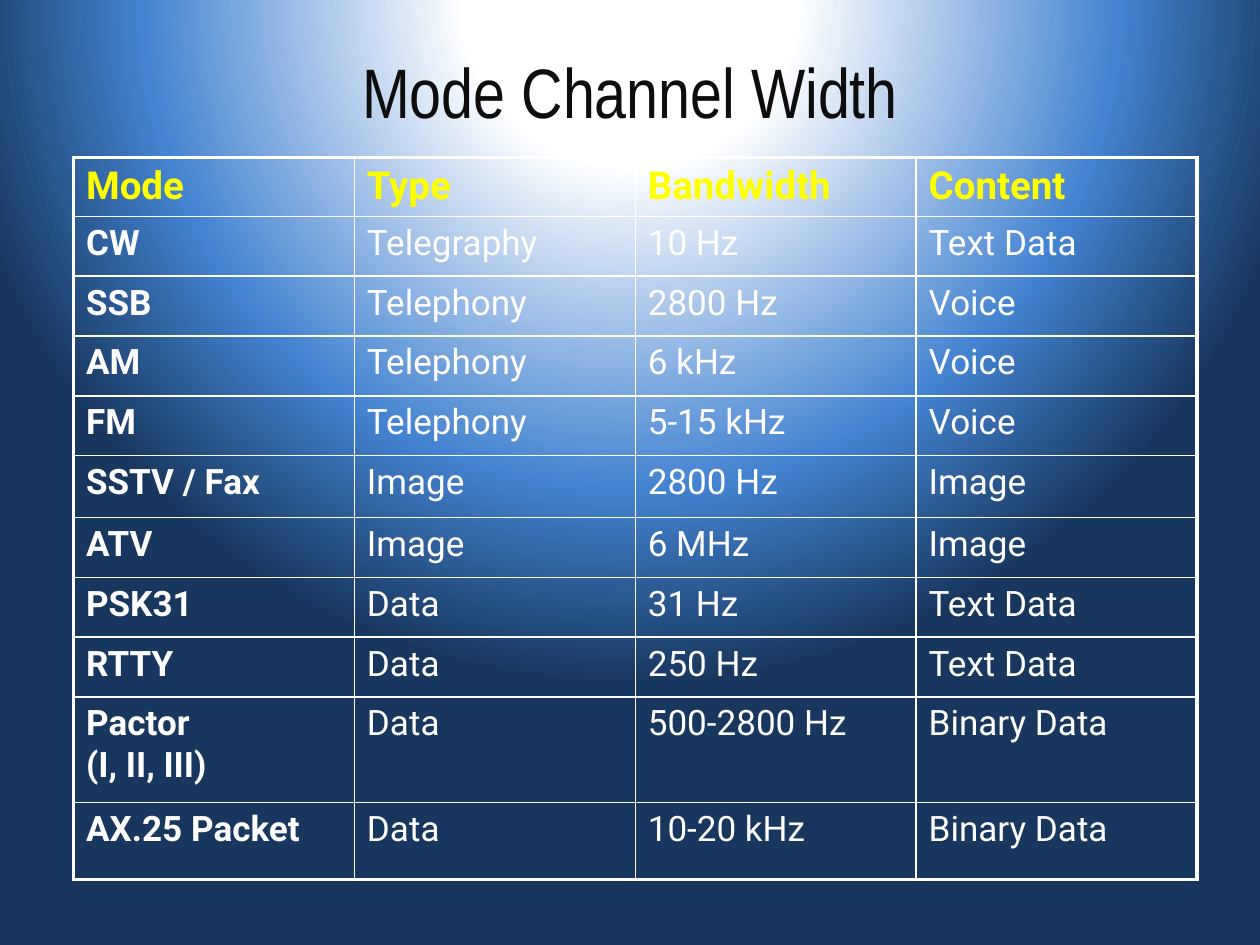
from dataclasses import dataclass

from lxml import etree
from pptx import Presentation
from pptx import util as u
from pptx.dml.color import RGBColor
from pptx.enum import text
from pptx.oxml import parse_xml
from pptx.oxml.ns import nsdecls, qn


@dataclass(frozen=True)
class Theme:
    title_font: str = "Arial Narrow"
    body_font: str = "Roboto"
    title_color: str = "0D0D0D"
    header_color: str = "FFFF00"
    body_color: str = "FFFFFF"
    border_color: str = "FFFFFF"
    glow: tuple = ((21, "FFFFFF", 100), (62, "4483D1", 100), (87, "17375E", 78))
    title_size: float = 40
    header_size: float = 22
    body_size: float = 20
    outer_border: float = 2.25
    inner_border: float = 1


class ModeSlide:
    """Builds a themed slide from a background, a title and a table."""

    def __init__(self, deck, theme):
        self.theme = theme
        self.slide = deck.slides.add_slide(deck.slide_layouts[6])

    def background(self):
        fill = self.slide.background.fill
        fill.solid()
        stops = "".join(
            f'<a:gs pos="{place * 1000}"><a:srgbClr val="{color}">'
            f'<a:alpha val="{alpha * 1000}"/></a:srgbClr></a:gs>'
            for place, color, alpha in self.theme.glow
        )
        gradient = parse_xml(
            f'<a:gradFill {nsdecls("a")} rotWithShape="1"><a:gsLst>{stops}</a:gsLst>'
            '<a:path path="circle"><a:fillToRect l="50000" t="-80000" r="50000" b="180000"/>'
            "</a:path></a:gradFill>"
        )
        solid = next(self.slide.element.iter(qn("a:solidFill")))
        solid.getparent().replace(solid, gradient)

    def format_runs(self, paragraph, font, size, color, bold=False):
        for run in paragraph.runs:
            run.font.name = font
            run.font.size = u.Pt(size)
            run.font.bold = bold
            run.font.color.rgb = RGBColor.from_string(color)

    def title(self, wording, left, top, width, height):
        box = self.slide.shapes.add_textbox(*map(u.Pt, (left, top, width, height)))
        frame = box.text_frame
        frame.word_wrap = True
        frame.vertical_anchor = text.MSO_ANCHOR.MIDDLE
        frame.text = wording
        heading = frame.paragraphs[0]
        heading.alignment = text.PP_ALIGN.CENTER
        self.format_runs(heading, self.theme.title_font, self.theme.title_size,
                         self.theme.title_color)

    def cell_borders(self, cell, outer_sides):
        properties = cell._tc.get_or_add_tcPr()
        for side in "LRTB":
            width = self.theme.outer_border if side in outer_sides else self.theme.inner_border
            properties.append(parse_xml(
                f'<a:ln{side} {nsdecls("a")} w="{u.Pt(width)}"><a:solidFill>'
                f'<a:srgbClr val="{self.theme.border_color}"/></a:solidFill></a:ln{side}>'
            ))

    def cell(self, cell, wording, is_header, is_mode):
        theme = self.theme
        cell.text_frame.text = wording
        paragraph = cell.text_frame.paragraphs[0]
        spacing = etree.SubElement(paragraph._p.get_or_add_pPr(), qn("a:spcBef"))
        etree.SubElement(spacing, qn("a:spcPct"), val="20000")
        self.format_runs(
            paragraph, theme.body_font,
            theme.header_size if is_header else theme.body_size,
            theme.header_color if is_header else theme.body_color,
            is_header or is_mode,
        )

    def table(self, records, left, top, column_width, row_heights):
        row_count, column_count = len(records), len(records[0])
        frame = self.slide.shapes.add_table(
            row_count, column_count, u.Pt(left), u.Pt(top),
            u.Pt(column_width * column_count), u.Pt(sum(row_heights)))
        grid = frame.table
        grid.first_row = grid.horz_banding = False
        for column in grid.columns:
            column.width = u.Pt(column_width)
        for r, (record, height) in enumerate(zip(records, row_heights)):
            grid.rows[r].height = u.Pt(height)
            for c, wording in enumerate(record):
                cell = grid.cell(r, c)
                self.cell(cell, wording, r == 0, c == 0)
                edges = {"L": c == 0, "R": c == column_count - 1,
                         "T": r == 0, "B": r == row_count - 1}
                self.cell_borders(cell, [side for side, outer in edges.items() if outer])
                cell.fill.background()


MODES = [
    ("Mode", "Type", "Bandwidth", "Content"),
    ("CW", "Telegraphy", "10 Hz", "Text Data"),
    ("SSB", "Telephony", "2800 Hz", "Voice"),
    ("AM", "Telephony", "6 kHz", "Voice"),
    ("FM", "Telephony", "5-15 kHz", "Voice"),
    ("SSTV / Fax", "Image", "2800 Hz", "Image"),
    ("ATV", "Image", "6 MHz", "Image"),
    ("PSK31", "Data", "31 Hz", "Text Data"),
    ("RTTY", "Data", "250 Hz", "Text Data"),
    ("Pactor\v(I, II, III)", "Data", "500-2800 Hz", "Binary Data"),
    ("AX.25 Packet", "Data", "10-20 kHz", "Binary Data"),
]
ROW_HEIGHTS = [33] + [34.2] * 4 + [35.4] + [34.2] * 3 + [60.3, 44]


def main():
    deck = Presentation()
    deck.slide_width, deck.slide_height = u.Pt(720), u.Pt(540)
    modes = ModeSlide(deck, Theme())
    modes.background()
    modes.title("Mode Channel Width", 36, 13, 648, 77)
    modes.table(MODES, 42, 90, 160.5, ROW_HEIGHTS)
    deck.save("out.pptx")


if __name__ == "__main__":
    main()
